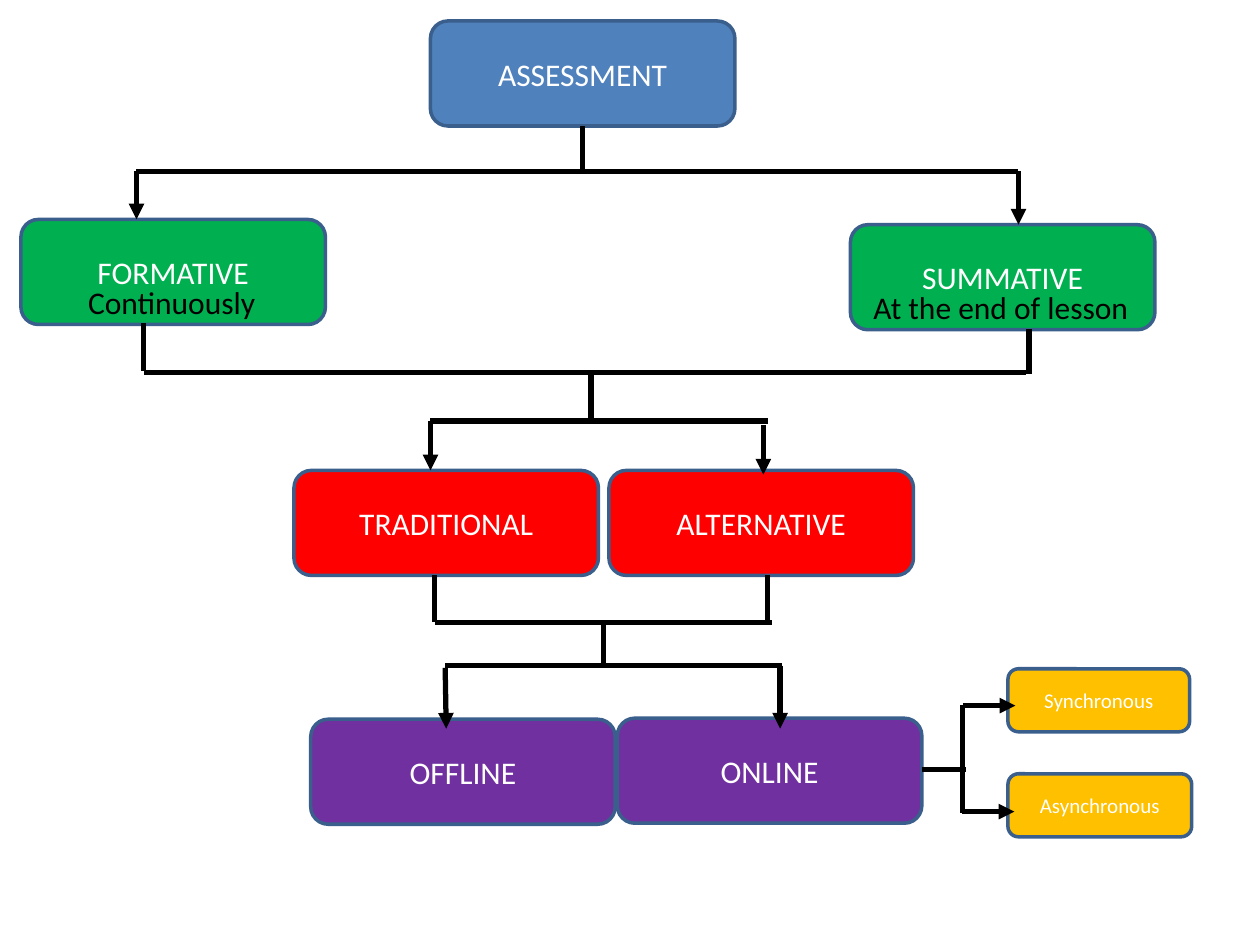
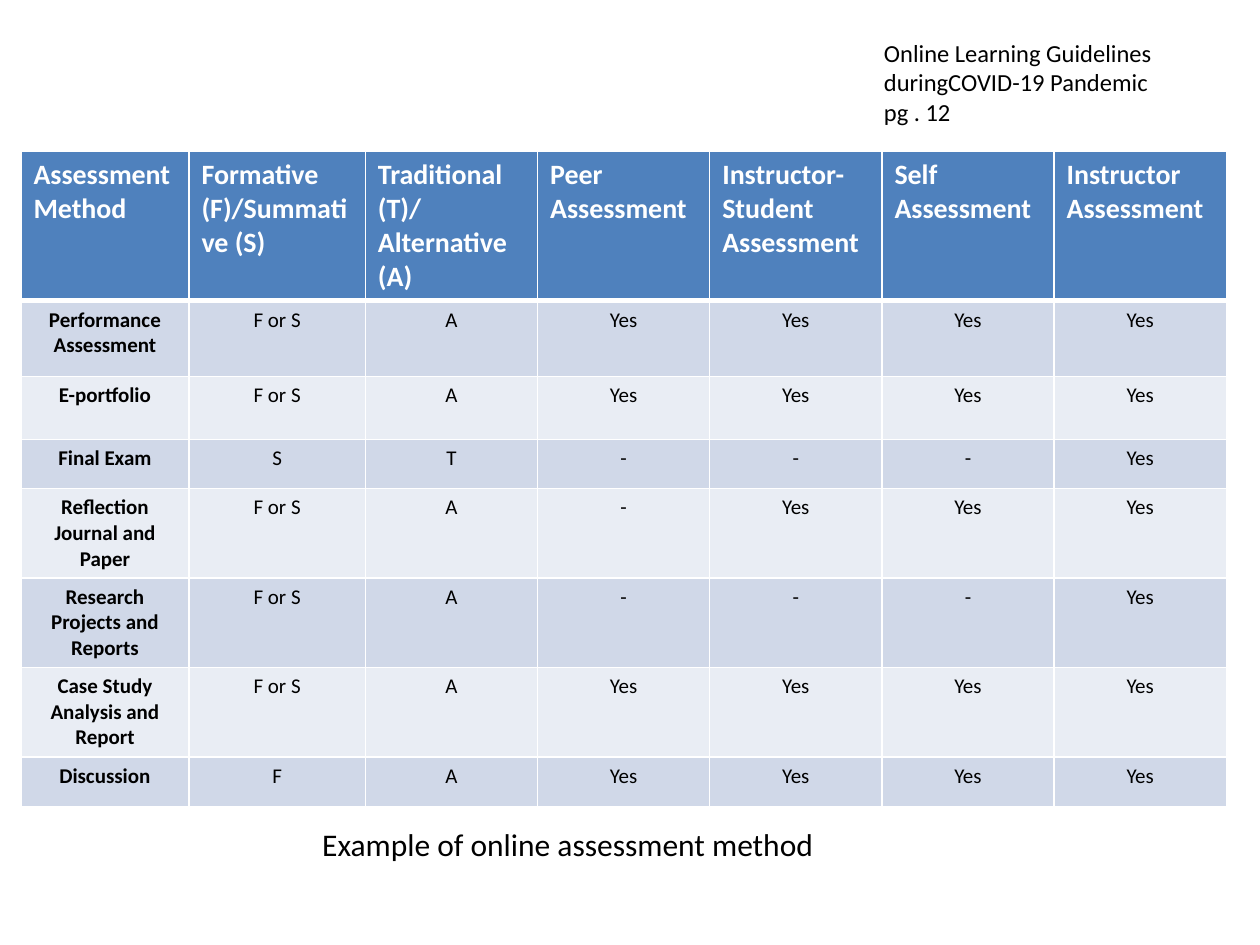
"""Build an assessment flow chart and a table of online assessment methods."""
from typing import Any, NamedTuple

import lxml.etree
import pptx
import pptx.dml.color
import pptx.enum.shapes
import pptx.enum.text
import pptx.oxml.ns
import pptx.util

COLUMNS, ROWS = 120, 90
WIDTH, HEIGHT = pptx.util.Inches(10), pptx.util.Inches(7.5)
BLACK, WHITE, BLUE, OUTLINE = "000000", "FFFFFF", "4F81BD", "3A5F8C"
GREEN, RED, PURPLE, AMBER = "00B050", "FF0000", "7030A0", "FFC000"
BANDS = ("D0D8E8", "E9EDF4")
CENTER = pptx.enum.text.PP_ALIGN.CENTER
LEFT = pptx.enum.text.PP_ALIGN.LEFT


class Stage(NamedTuple):
    label: str
    column: float
    row: float
    fill: str
    columns: float = 29
    rows: float = 10
    size: int = 18


class Link(NamedTuple):
    start: tuple[float, float]
    end: tuple[float, float]
    arrow: bool = False


class Note(NamedTuple):
    lines: tuple[str, ...]
    column: float
    row: float
    columns: float
    rows: float
    size: int = 18
    wrap: bool = True


STAGES = (
    Stage("ASSESSMENT", 41, 2, BLUE),
    Stage("SUMMATIVE", 81, 21.4, GREEN),
    Stage("FORMATIVE", 2, 20.9, GREEN),
    Stage("ALTERNATIVE", 58, 44.8, RED),
    Stage("TRADITIONAL", 28, 44.8, RED),
    Stage("ONLINE", 58.8, 68.4, PURPLE),
    Stage("OFFLINE", 29.6, 68.5, PURPLE),
    Stage("Synchronous", 96, 63.7, AMBER, 17.3, 6, 12),
    Stage("Asynchronous", 96, 73.7, AMBER, 17.5, 6, 12),
)
LINKS = (
    Link((55.5, 12), (55.5, 16.3)),
    Link((13, 16.3), (97, 16.3)),
    Link((13, 16.3), (13, 20.9), True),
    Link((97, 16.3), (97, 21.4), True),
    Link((13.7, 30.8), (13.7, 35.3)),
    Link((98, 31.3), (98, 35.6)),
    Link((13.7, 35.5), (97.7, 35.5)),
    Link((56.3, 35.6), (56.3, 40.1)),
    Link((41, 40.1), (73.1, 40.1)),
    Link((41, 40.1), (41, 44.8), True),
    Link((72.7, 40.5), (72.7, 45.2), True),
    Link((41.4, 54.8), (41.4, 59.2)),
    Link((73.1, 54.8), (73.1, 59.3)),
    Link((41.4, 59.3), (73.5, 59.3)),
    Link((57.5, 59.3), (57.5, 63.6)),
    Link((42.4, 63.4), (74.5, 63.4)),
    Link((42.4, 63.6), (42.5, 69.4), True),
    Link((74.3, 63.4), (74.3, 69.4), True),
    Link((87.8, 73.3), (92, 73.3)),
    Link((91.7, 67.1), (91.7, 77.4)),
    Link((91.7, 67.2), (96.7, 67.2), True),
    Link((91.6, 77.3), (96.6, 77.3), True),
)
TIMINGS = (
    Note(("Continuously",), 7.2, 26.4, 18.6, 4.8, wrap=False),
    Note(("At the end of lesson",), 82, 26.8, 27, 4.8, wrap=False),
)
CAPTIONS = (
    Note(("Example of online assessment method",), 29.5, 78, 64, 4.8),
    Note(("Online Learning Guidelines duringCOVID-19 Pandemic", "pg . 12"),
         83, 3, 34, 9.7, 14),
)
METHODS = (
    ("Assessment Method", "Formative (F)/Summative (S)", "Traditional (T)/ Alternative (A)",
     "Peer Assessment", "Instructor- Student Assessment", "Self Assessment",
     "Instructor Assessment"),
    ("Performance Assessment", "F or S", "A", "Yes", "Yes", "Yes", "Yes"),
    ("E-portfolio", "F or S", "A", "Yes", "Yes", "Yes", "Yes"),
    ("Final Exam", "S", "T", "-", "-", "-", "Yes"),
    ("Reflection Journal and Paper", "F or S", "A", "-", "Yes", "Yes", "Yes"),
    ("Research Projects and Reports", "F or S", "A", "-", "-", "-", "Yes"),
    ("Case Study Analysis and Report", "F or S", "A", "Yes", "Yes", "Yes", "Yes"),
    ("Discussion", "F", "A", "Yes", "Yes", "Yes", "Yes"),
)
METHOD_COLUMNS = (16, 16.8) + (16.4,) * 5
METHOD_ROWS = (14.16, 7.2, 6, 4.7, 8.5, 8.5, 8.5, 4.7)


def across(columns: float) -> int:
    return round(WIDTH * columns / COLUMNS)


def down(rows: float) -> int:
    return round(HEIGHT * rows / ROWS)


def place(item: Stage | Note) -> tuple[int, int, int, int]:
    return across(item.column), down(item.row), across(item.columns), down(item.rows)


def rgb(value: str) -> pptx.dml.color.RGBColor:
    return pptx.dml.color.RGBColor.from_string(value)


def apply(target: Any, values: dict[str, Any]) -> None:
    for key, value in values.items():
        setattr(target, key, value)


def write(frame: Any, lines: tuple[str, ...], size: int, color: str,
          alignment: Any = LEFT, bold: bool = False) -> None:
    for index, line in enumerate(lines):
        paragraph = frame.add_paragraph() if index else frame.paragraphs[0]
        paragraph.alignment = alignment
        words = paragraph.add_run()
        words.text = line
        apply(words.font, {"name": "Calibri", "size": pptx.util.Pt(size), "bold": bold})
        words.font.color.rgb = rgb(color)


def stroke(line: Any, color: str, width: float) -> None:
    line.color.rgb = rgb(color)
    line.width = pptx.util.Pt(width)


def draw_stage(slide: Any, stage: Stage) -> None:
    box = slide.shapes.add_shape(
        pptx.enum.shapes.MSO_SHAPE.ROUNDED_RECTANGLE, *place(stage))
    box.shadow.inherit = False
    box.fill.solid()
    box.fill.fore_color.rgb = rgb(stage.fill)
    stroke(box.line, OUTLINE, 2)
    apply(box.text_frame, {"word_wrap": True,
                           "vertical_anchor": pptx.enum.text.MSO_ANCHOR.MIDDLE})
    write(box.text_frame, (stage.label,), stage.size, WHITE, CENTER)


def draw_link(slide: Any, link: Link) -> None:
    (x1, y1), (x2, y2) = link.start, link.end
    connector = slide.shapes.add_connector(
        pptx.enum.shapes.MSO_CONNECTOR.STRAIGHT, across(x1), down(y1), across(x2), down(y2))
    stroke(connector.line, BLACK, 3)
    properties = connector._element.spPr
    if link.arrow:
        lxml.etree.SubElement(properties.find(pptx.oxml.ns.qn("a:ln")),
                              pptx.oxml.ns.qn("a:tailEnd"), type="triangle")
    lxml.etree.SubElement(properties, pptx.oxml.ns.qn("a:effectLst"))


def draw_note(slide: Any, note: Note) -> None:
    frame = slide.shapes.add_textbox(*place(note)).text_frame
    frame.word_wrap = note.wrap
    write(frame, note.lines, note.size, BLACK)


def border(cell: Any, widths: dict[str, float]) -> None:
    properties = cell._tc.get_or_add_tcPr()
    for index, (side, width) in enumerate(widths.items()):
        edge = lxml.etree.Element(pptx.oxml.ns.qn(f"a:ln{side}"),
                                  w=str(pptx.util.Pt(width)))
        paint = lxml.etree.SubElement(edge, pptx.oxml.ns.qn("a:solidFill"))
        lxml.etree.SubElement(paint, pptx.oxml.ns.qn("a:srgbClr"), val=WHITE)
        properties.insert(index, edge)


def draw_methods(slide: Any) -> None:
    methods = slide.shapes.add_table(
        len(METHOD_ROWS), len(METHOD_COLUMNS), across(2), down(14.4),
        across(sum(METHOD_COLUMNS)), down(sum(METHOD_ROWS))).table
    for column, share in zip(methods.columns, METHOD_COLUMNS):
        column.width = across(share)
    for index, (row, share, texts) in enumerate(zip(methods.rows, METHOD_ROWS, METHODS)):
        row.height = down(share)
        heading = index == 0
        for position, (cell, text) in enumerate(zip(row.cells, texts)):
            cell.fill.solid()
            cell.fill.fore_color.rgb = rgb(BLUE if heading else BANDS[(index - 1) % 2])
            border(cell, {"L": 1, "R": 1, "T": 3 if index == 1 else 1,
                          "B": 3 if heading else 1})
            write(cell.text_frame, (text,), 16 if heading else 12,
                  WHITE if heading else BLACK, LEFT if heading else CENTER,
                  heading or position == 0)


def main() -> None:
    deck = pptx.Presentation()
    apply(deck, {"slide_width": WIDTH, "slide_height": HEIGHT})
    blank = deck.slide_layouts[6]
    flow = deck.slides.add_slide(blank)
    for stage in STAGES:
        draw_stage(flow, stage)
    for link in LINKS:
        draw_link(flow, link)
    for timing in TIMINGS:
        draw_note(flow, timing)
    examples = deck.slides.add_slide(blank)
    draw_methods(examples)
    for caption in CAPTIONS:
        draw_note(examples, caption)
    deck.save("out.pptx")


if __name__ == "__main__":
    main()
